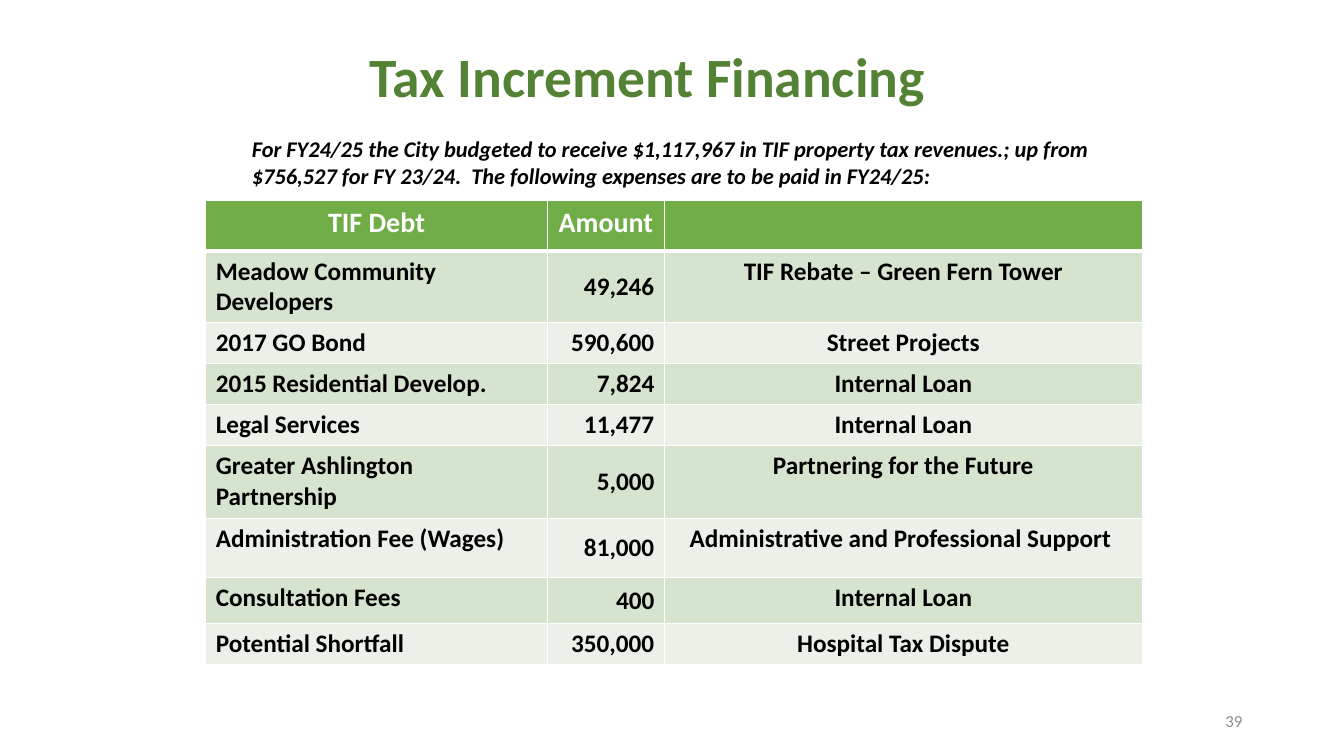
from dataclasses import dataclass

from lxml import etree
from pptx import Presentation
from pptx.dml.color import RGBColor
from pptx.enum.text import MSO_ANCHOR, PP_ALIGN
from pptx.oxml.ns import qn
from pptx.slide import Slide
from pptx.table import _Cell
from pptx.text.text import TextFrame
from pptx.util import Inches, Pt

LEFT, CENTER, RIGHT = PP_ALIGN.LEFT, PP_ALIGN.CENTER, PP_ALIGN.RIGHT
TOP, MIDDLE = MSO_ANCHOR.TOP, MSO_ANCHOR.MIDDLE


@dataclass(frozen=True)
class Theme:
    font: str = "Calibri"
    title_green: str = "548235"
    header_green: str = "70AD47"
    bands: tuple[str, str] = ("D5E3CF", "EBF1E9")
    white: str = "FFFFFF"
    black: str = "000000"
    gray: str = "8C8C8C"
    title_size: float = 39.6
    header_size: float = 20
    body_size: float = 18
    intro_size: float = 16
    number_size: float = 12
    thin_border: float = 1
    header_border: float = 3


@dataclass(frozen=True)
class TextStyle:
    size: float
    color: str
    align: PP_ALIGN = LEFT
    anchor: MSO_ANCHOR = TOP
    bold: bool = True
    italic: bool = False
    line_spacing: float = 1.0


@dataclass(frozen=True)
class TextBlock:
    text: str
    left: float
    top: float
    width: float
    height: float
    style: TextStyle


@dataclass(frozen=True)
class Expense:
    debt: str
    amount: str
    purpose: str
    height: float = 0.4


THEME = Theme()

TEXT_BLOCKS = [
    TextBlock(
        "Tax Increment Financing\t", 2.28, 0.43, 8.77, 0.71,
        TextStyle(THEME.title_size, THEME.title_green, CENTER, MIDDLE, line_spacing=0.9),
    ),
    TextBlock(
        "39", 9.42, 6.95, 3, 0.4,
        TextStyle(THEME.number_size, THEME.gray, RIGHT, MIDDLE, bold=False),
    ),
    TextBlock(
        "For FY24/25 the City budgeted to receive $1,117,967 in TIF property tax revenues.; "
        "up from $756,527 for FY 23/24.  The following expenses are to be paid in FY24/25:",
        2.4, 1.29, 8.58, 0.64,
        TextStyle(THEME.intro_size, THEME.black, italic=True),
    ),
]

HEADER = Expense("TIF Debt", "Amount", "", 0.5)
EXPENSES = [
    Expense("Meadow Community Developers", "49,246", "TIF Rebate – Green Fern Tower", 0.7),
    Expense("2017 GO Bond", "590,600", "Street Projects"),
    Expense("2015 Residential Develop.", "7,824", "Internal Loan"),
    Expense("Legal Services", "11,477", "Internal Loan"),
    Expense("Greater Ashlington Partnership", "5,000", "Partnering for the Future", 0.73),
    Expense("Administration Fee (Wages)", "81,000", "Administrative and Professional Support ", 0.58),
    Expense("Consultation Fees", "400", "Internal Loan", 0.46),
    Expense("Potential Shortfall", "350,000", "Hospital Tax Dispute"),
]
COLUMN_WIDTHS = (3.39, 1.16, 4.74)
HEADER_STYLE = TextStyle(THEME.header_size, THEME.white, CENTER)
EXPENSE_STYLES = (
    TextStyle(THEME.body_size, THEME.black),
    TextStyle(THEME.body_size, THEME.black, RIGHT, MIDDLE),
    TextStyle(THEME.body_size, THEME.black, CENTER),
)


def write_text(frame: TextFrame, text: str, style: TextStyle) -> None:
    paragraph = frame.paragraphs[0]
    paragraph.alignment = style.align
    paragraph.line_spacing = style.line_spacing
    run = paragraph.add_run()
    run.text = text
    run.font.name = THEME.font
    run.font.size = Pt(style.size)
    run.font.bold = style.bold
    run.font.italic = style.italic
    run.font.color.rgb = RGBColor.from_string(style.color)


def add_text_block(slide: Slide, block: TextBlock) -> None:
    box = slide.shapes.add_textbox(
        Inches(block.left), Inches(block.top), Inches(block.width), Inches(block.height)
    )
    box.text_frame.word_wrap = True
    box.text_frame.vertical_anchor = block.style.anchor
    write_text(box.text_frame, block.text, block.style)


def set_border(cell: _Cell, side: str, width: float) -> None:
    properties = cell._tc.get_or_add_tcPr()
    line = etree.SubElement(properties, qn(f"a:{side}"), w=str(Pt(width)))
    fill = etree.SubElement(line, qn("a:solidFill"))
    etree.SubElement(fill, qn("a:srgbClr"), val=THEME.white)


def fill_cell(
    cell: _Cell, text: str, style: TextStyle, color: str, top: float, bottom: float
) -> None:
    cell.vertical_anchor = style.anchor
    for side, width in (
        ("lnL", THEME.thin_border),
        ("lnR", THEME.thin_border),
        ("lnT", top),
        ("lnB", bottom),
    ):
        set_border(cell, side, width)
    cell.fill.solid()
    cell.fill.fore_color.rgb = RGBColor.from_string(color)
    write_text(cell.text_frame, text, style)


def add_expense_table(slide: Slide) -> None:
    expenses = [HEADER, *EXPENSES]
    table = slide.shapes.add_table(
        len(expenses), len(COLUMN_WIDTHS), Inches(2.04), Inches(1.99),
        Inches(sum(COLUMN_WIDTHS)), Inches(sum(expense.height for expense in expenses)),
    ).table
    for column, width in zip(table.columns, COLUMN_WIDTHS):
        column.width = Inches(width)
    for index, expense in enumerate(expenses):
        table.rows[index].height = Inches(expense.height)
        is_header = index == 0
        styles = (HEADER_STYLE,) * len(COLUMN_WIDTHS) if is_header else EXPENSE_STYLES
        color = THEME.header_green if is_header else THEME.bands[(index - 1) % 2]
        top = THEME.header_border if index == 1 else THEME.thin_border
        bottom = THEME.header_border if is_header else THEME.thin_border
        texts = (expense.debt, expense.amount, expense.purpose)
        for cell, text, style in zip(table.rows[index].cells, texts, styles):
            fill_cell(cell, text, style, color, top, bottom)


def main() -> None:
    presentation = Presentation()
    presentation.slide_width = Inches(13.33)
    presentation.slide_height = Inches(7.5)
    slide = presentation.slides.add_slide(presentation.slide_layouts[6])
    add_expense_table(slide)
    for block in TEXT_BLOCKS:
        add_text_block(slide, block)
    presentation.save("out.pptx")


if __name__ == "__main__":
    main()
